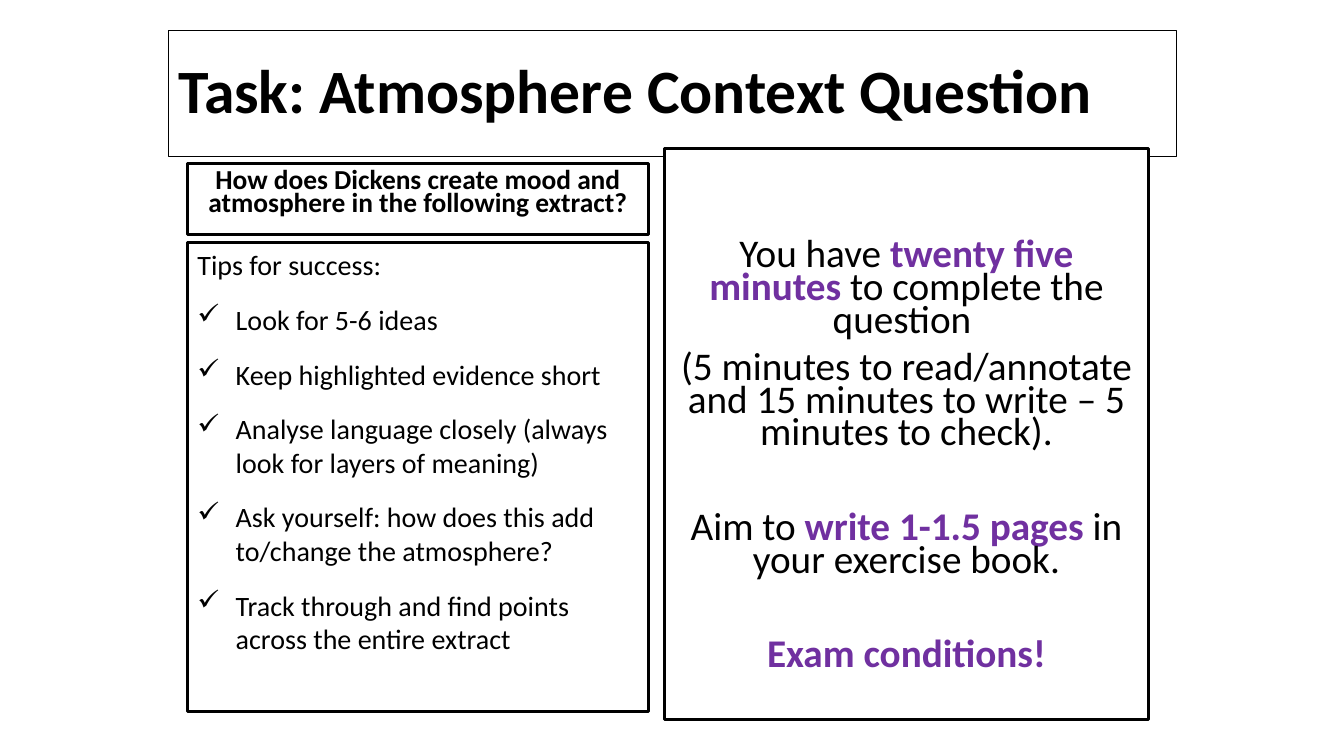
from lxml.etree import SubElement
from pptx import Presentation
from pptx.dml.color import RGBColor
from pptx.enum.shapes import MSO_SHAPE
from pptx.enum.text import MSO_ANCHOR, PP_ALIGN
from pptx.oxml.ns import qn
from pptx.util import Inches, Pt

BLACK, WHITE, PURPLE = "000000", "FFFFFF", "7030A0"

deck = Presentation()
deck.slide_width, deck.slide_height = Inches(13.33), Inches(7.5)
slide = deck.slides.add_slide(deck.slide_layouts[6])


def add_panel(left, top, width, height, border=2.25, anchor=MSO_ANCHOR.TOP, inset=0.05):
    panel = slide.shapes.add_shape(
        MSO_SHAPE.RECTANGLE, Inches(left), Inches(top), Inches(width), Inches(height))
    panel.shadow.inherit = False
    panel.fill.solid()
    panel.fill.fore_color.rgb = RGBColor.from_string(WHITE)
    panel.line.color.rgb = RGBColor.from_string(BLACK)
    panel.line.width = Pt(border)
    frame = panel.text_frame
    frame.word_wrap = True
    frame.vertical_anchor = anchor
    frame.margin_top = Inches(inset)
    return frame


def write_paragraph(frame, index, runs, size, align, spacing=1.0, before=0):
    paragraph = frame.paragraphs[0] if index == 0 else frame.add_paragraph()
    paragraph.alignment = align
    paragraph.line_spacing = spacing
    paragraph.space_before = Pt(before)
    for text, color, bold in runs:
        run = paragraph.add_run()
        run.text = text
        run.font.name = "Calibri"
        run.font.size = Pt(size)
        run.font.bold = bold
        run.font.color.rgb = RGBColor.from_string(color)
    return paragraph


title = add_panel(1.67, 0.3, 10, 1.25, border=0.75, anchor=MSO_ANCHOR.MIDDLE)
write_paragraph(title, 0, [("Task: Atmosphere Context Question", BLACK, True)],
                44, PP_ALIGN.LEFT, 0.9)

instructions = add_panel(6.59, 1.47, 4.8, 5.67, inset=0.92)
instruction_lines = [
    (0, [("You have ", BLACK, False), ("twenty five minutes ", PURPLE, True),
         ("to complete the question ", BLACK, False)]),
    (10, [("(5 minutes to read/annotate and 15 minutes to write – 5 minutes to check).",
           BLACK, False)]),
    (44, [("Aim to ", BLACK, False), ("write 1-1.5 pages ", PURPLE, True),
          ("in your exercise book.", BLACK, False)]),
    (44, [("Exam conditions!", PURPLE, True)]),
]
for index, (before, runs) in enumerate(instruction_lines):
    write_paragraph(instructions, index, runs, 28, PP_ALIGN.CENTER, 0.7, before)

question = add_panel(1.86, 1.62, 4.57, 0.71, inset=0.08)
write_paragraph(
    question, 0,
    [("How does Dickens create mood and atmosphere in the following extract?", BLACK, True)],
    19.6, PP_ALIGN.CENTER, 0.7)

tips = add_panel(1.86, 2.41, 4.57, 4.65)
write_paragraph(tips, 0, [("Tips for success:", BLACK, False)], 20, PP_ALIGN.LEFT)
tip_texts = [
    "Look for 5-6 ideas",
    "Keep highlighted evidence short",
    "Analyse language closely (always look for layers of meaning)",
    "Ask yourself: how does this add to/change the atmosphere?",
    "Track through and find points across the entire extract",
]
for index, text in enumerate(tip_texts, start=1):
    tip = write_paragraph(tips, index, [(text, BLACK, False)], 20, PP_ALIGN.LEFT, before=15)
    properties = tip._p.get_or_add_pPr()
    properties.set("marL", str(Inches(0.38)))
    properties.set("indent", str(-Inches(0.38)))
    SubElement(properties, qn("a:buChar")).set("char", "✓")

deck.save("out.pptx")
